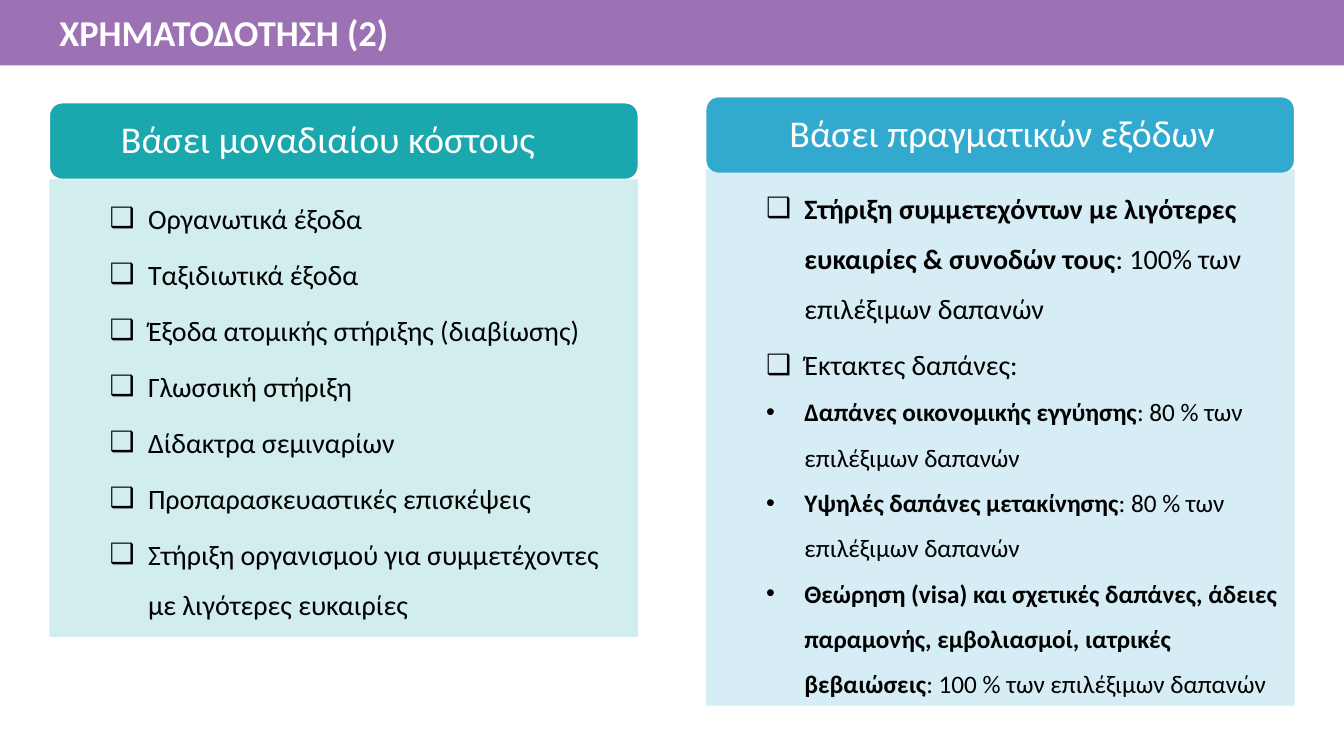
import dataclasses

import lxml.etree
import pptx
import pptx.dml.color
import pptx.enum.shapes
import pptx.enum.text
import pptx.oxml.ns
import pptx.util

PX = 9144  # EMU per px, 100 px to the inch
FONT = "Calibri"
WHITE, BLACK = "FFFFFF", "000000"
BOX, DOT = "❑", "•"
RECT = pptx.enum.shapes.MSO_SHAPE.RECTANGLE
ROUND = pptx.enum.shapes.MSO_SHAPE.ROUNDED_RECTANGLE
GROW = pptx.enum.text.MSO_AUTO_SIZE.SHAPE_TO_FIT_TEXT


@dataclasses.dataclass
class Item:
    bold: str
    plain: str
    mark: str = BOX
    size: int = 20
    after: int = 0


@dataclasses.dataclass
class Panel:
    head: str
    left: int
    top: int
    inset: int
    head_fill: str
    body_fill: str
    body_top: int
    body_height: int
    items: list[Item]


PANELS = [
    Panel("Βάσει μοναδιαίου κόστους", 49, 102, 62, "1AA7AE", "1CA7AE", 178, 454, [
        Item("", "Οργανωτικά έξοδα", after=4),
        Item("", "Ταξιδιωτικά έξοδα", after=4),
        Item("", "Έξοδα ατομικής στήριξης (διαβίωσης)", after=4),
        Item("", "Γλωσσική στήριξη", after=4),
        Item("", "Δίδακτρα σεμιναρίων", after=4),
        Item("", "Προπαρασκευαστικές επισκέψεις", after=4),
        Item("", "Στήριξη οργανισμού για συμμετέχοντες με λιγότερες ευκαιρίες"),
    ]),
    Panel("Βάσει πραγματικών εξόδων", 700, 96, 74, "32A9CE", "32A9CE", 168, 532, [
        Item("Στήριξη συμμετεχόντων με λιγότερες ευκαιρίες & συνοδών τους",
             ": 100% των επιλέξιμων δαπανών", after=4),
        Item("", "Έκτακτες δαπάνες:"),
        Item("Δαπάνες οικονομικής εγγύησης", ": 80 % των επιλέξιμων δαπανών", DOT, 18),
        Item("Υψηλές δαπάνες μετακίνησης", ": 80 % των επιλέξιμων δαπανών", DOT, 18),
        Item("Θεώρηση (visa) και σχετικές δαπάνες, άδειες παραμονής, "
             "εμβολιασμοί, ιατρικές βεβαιώσεις",
             ": 100 % των επιλέξιμων δαπανών", DOT, 18),
    ]),
]


def color(code: str) -> pptx.dml.color.RGBColor:
    return pptx.dml.color.RGBColor.from_string(code)


def add_tag(parent, name: str, **attrs: str):
    return lxml.etree.SubElement(parent, pptx.oxml.ns.qn(name), attrs)


def style(run, size: int, code: str, bold: bool = False) -> None:
    run.font.name = FONT
    run.font.size = pptx.util.Pt(size)
    run.font.bold = bold
    run.font.color.rgb = color(code)


def add_box(slide, kind, left: int, top: int, width: int, height: int, fill: str):
    box = slide.shapes.add_shape(kind, left * PX, top * PX, width * PX, height * PX)
    box.shadow.inherit = False
    box.fill.solid()
    box.fill.fore_color.rgb = color(fill)
    box.line.fill.background()
    return box


def add_label(slide, text: str, left: int, top: int, width: int, height: int,
              size: int, bold: bool = False):
    label = slide.shapes.add_textbox(left * PX, top * PX, width * PX, height * PX)
    frame = label.text_frame
    frame.text = text
    style(frame.paragraphs[0].runs[0], size, WHITE, bold)
    return frame


def add_item(para, item: Item) -> None:
    para.level = 1
    para.alignment = pptx.enum.text.PP_ALIGN.LEFT
    para.line_spacing = 1.5
    para.space_after = pptx.util.Pt(item.after)
    for text, bold in ((item.bold, True), (item.plain, False)):
        if text:
            run = para.add_run()
            run.text = text
            style(run, item.size, BLACK, bold)
    # Bullet with a hanging indent
    props = para._p.get_or_add_pPr()
    props.set("marL", str(88 * PX))
    props.set("indent", str(-38 * PX))
    add_tag(props, "a:buFont", typeface="Arial")
    add_tag(props, "a:buChar", char=item.mark)


def add_panel(slide, panel: Panel) -> None:
    # Heading
    head = add_box(slide, ROUND, panel.left, panel.top, 584, 76, panel.head_fill)
    head.line.color.rgb = color(WHITE)
    head.line.width = pptx.util.Pt(1)
    frame = add_label(slide, panel.head, panel.left + panel.inset, panel.top + 4,
                      578, 68, 27)
    frame.word_wrap = True
    frame.vertical_anchor = pptx.enum.text.MSO_ANCHOR.MIDDLE
    frame.margin_left = frame.margin_right = 9 * PX
    frame.margin_top = frame.margin_bottom = 9 * PX
    frame.paragraphs[0].line_spacing = 0.9

    # Body with a fill at 20 % opacity
    body = add_box(slide, RECT, panel.left, panel.body_top, 584, panel.body_height,
                   panel.body_fill)
    tint = body._element.spPr.find(".//" + pptx.oxml.ns.qn("a:srgbClr"))
    add_tag(tint, "a:alpha", val="20000")
    frame = body.text_frame
    frame.word_wrap = True
    frame.auto_size = GROW
    frame.vertical_anchor = pptx.enum.text.MSO_ANCHOR.TOP
    for i, item in enumerate(panel.items):
        add_item(frame.add_paragraph() if i else frame.paragraphs[0], item)


def main() -> None:
    deck = pptx.Presentation()
    deck.slide_width, deck.slide_height = 1333 * PX, 750 * PX
    slide = deck.slides.add_slide(deck.slide_layouts[6])

    # Title band
    add_box(slide, RECT, 0, 0, 1333, 65, "9D72B5")
    title = add_label(slide, "ΧΡΗΜΑΤΟΔΟΤΗΣΗ (2)", 49, 5, 350, 54, 26, True)
    title.word_wrap = False
    title.auto_size = GROW

    # Funding panels
    for panel in PANELS:
        add_panel(slide, panel)
    deck.save("out.pptx")


if __name__ == "__main__":
    main()
